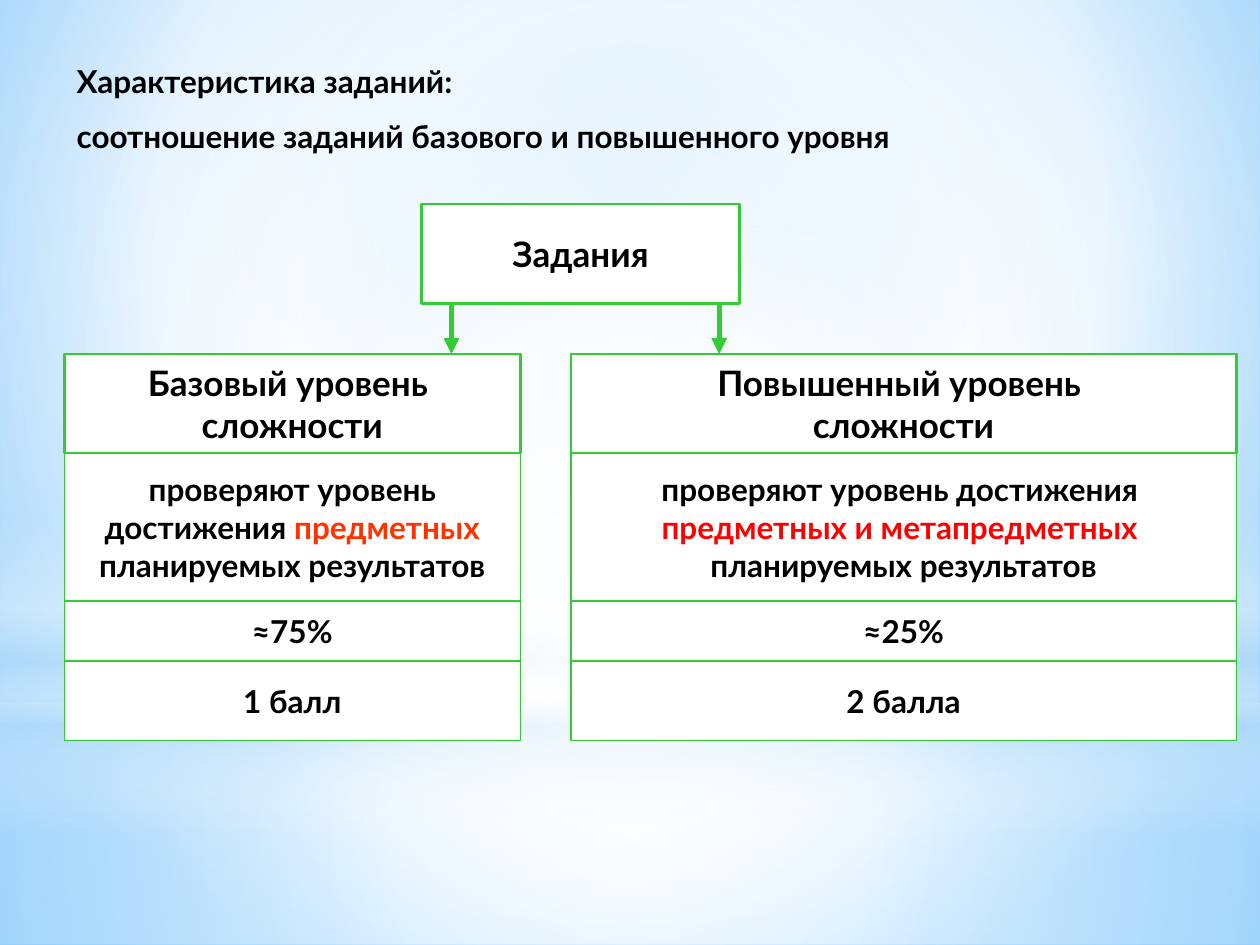
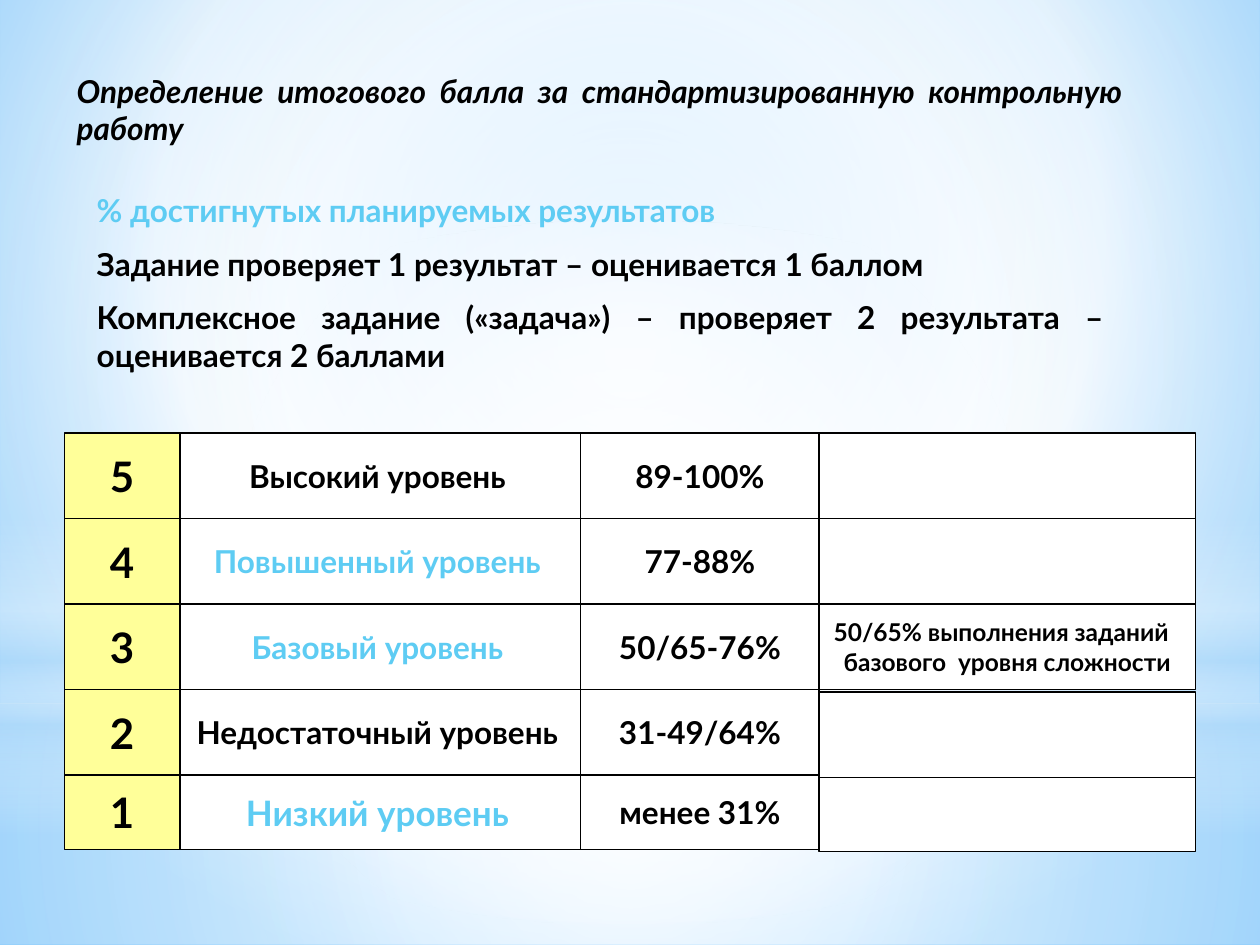
from lxml import etree
from pptx import Presentation
from pptx.dml.color import RGBColor
from pptx.enum.shapes import MSO_CONNECTOR, MSO_SHAPE
from pptx.enum.text import MSO_ANCHOR, MSO_AUTO_SIZE, PP_ALIGN
from pptx.oxml import parse_xml
from pptx.oxml.ns import nsdecls, qn
from pptx.util import Pt

RECTANGLE, OVAL = MSO_SHAPE.RECTANGLE, MSO_SHAPE.OVAL
STRAIGHT = MSO_CONNECTOR.STRAIGHT
MIDDLE, TOP = MSO_ANCHOR.MIDDLE, MSO_ANCHOR.TOP
CENTER, LEFT, JUSTIFY = PP_ALIGN.CENTER, PP_ALIGN.LEFT, PP_ALIGN.JUSTIFY
GROW = MSO_AUTO_SIZE.SHAPE_TO_FIT_TEXT

# Shared style
FONT = "Lato"
BLACK, WHITE, GREEN = "000000", "FFFFFF", "33CC33"
SKY, YELLOW, ORANGE, RED = "5ECCF3", "FFFF99", "FF3300", "FF0000"
HAZE = "B4DCFA"
WIDTH, HEIGHT = 720, 540
MARGIN = 36.7
CENTERED = (50, 50, 50, 50)

# Background gradient and the soft light over it: stops are (place, colour, opacity)
BACKGROUND = [(0, "9ED5FF", 100), (60, WHITE, 100), (100, "5BB9FF", 100)]
LIGHTS = [
    (RECTANGLE, 401.8, 138.2, CENTERED,
     [(0, WHITE, 91), (37, WHITE, 76), (100, HAZE, 79)]),
    (RECTANGLE, 0, 401.8, CENTERED,
     [(0, WHITE, 89), (48, WHITE, 62), (100, HAZE, 79)]),
    (RECTANGLE, 296.6, 180, None,
     [(0, WHITE, 0), (29, WHITE, 30), (45, HAZE, 40),
      (55, WHITE, 26), (65, HAZE, 60), (100, WHITE, 0)]),
    (OVAL, 126, 401.8, CENTERED, [(0, WHITE, 100), (56, WHITE, 0)]),
]


def color(value):
    return RGBColor.from_string(value)


def set_gradient(fill, element, stops, center):
    """Fill with a circular gradient, or a vertical one when center is None."""
    fill.gradient()
    previous = next(element.iter(qn("a:gradFill")))
    stop_xml = "".join(
        f'<a:gs pos="{place * 1000}"><a:srgbClr val="{value}">'
        f'<a:alpha val="{opacity * 1000}"/></a:srgbClr></a:gs>'
        for place, value, opacity in stops)
    if center is None:
        direction = '<a:lin ang="5400000" scaled="0"/>'
    else:
        sides = " ".join(f'{side}="{part * 1000}"' for side, part in zip("ltrb", center))
        direction = f'<a:path path="circle"><a:fillToRect {sides}/></a:path>'
    gradient = parse_xml(
        f'<a:gradFill {nsdecls("a")} rotWithShape="1">'
        f"<a:gsLst>{stop_xml}</a:gsLst>{direction}</a:gradFill>")
    previous.getparent().replace(previous, gradient)


class Deck:
    """Holds the presentation, its style and the current slide."""

    def __init__(self):
        self.presentation = Presentation()
        self.presentation.slide_width = Pt(WIDTH)
        self.presentation.slide_height = Pt(HEIGHT)
        master = self.presentation.slide_master
        set_gradient(master.background.fill, master.element, BACKGROUND, (20, 10, 20, 60))
        self.slide = None

    def new_slide(self):
        self.slide = self.presentation.slides.add_slide(self.presentation.slide_layouts[6])
        for kind, top, height, center, stops in LIGHTS:
            light = self.shape(kind, 0, top, WIDTH, height)
            set_gradient(light.fill, light.element, stops, center)
            light.line.fill.background()

    def shape(self, kind, left, top, width, height):
        shape = self.slide.shapes.add_shape(kind, Pt(left), Pt(top), Pt(width), Pt(height))
        shape.shadow.inherit = False
        return shape

    def add_lines(self, frame, lines, size, align=CENTER, gap=0, italic=False):
        """Each line is a list of runs; a run is a text or a (text, colour) pair."""
        for index, runs in enumerate(lines):
            paragraph = frame.add_paragraph() if index else frame.paragraphs[0]
            paragraph.alignment = align
            paragraph.space_before = Pt(gap)
            for item in runs:
                text, value = item if isinstance(item, tuple) else (item, BLACK)
                run = paragraph.add_run()
                run.text = text
                run.font.name = FONT
                run.font.size = Pt(size)
                run.font.bold = True
                run.font.italic = italic
                run.font.color.rgb = color(value)

    def box(self, left, top, width, height, lines=(), size=18,
            fill=WHITE, line=BLACK, weight=0.75):
        box = self.shape(RECTANGLE, left, top, width, height)
        box.fill.solid()
        box.fill.fore_color.rgb = color(fill)
        box.line.color.rgb = color(line)
        box.line.width = Pt(weight)
        box.text_frame.word_wrap = False
        box.text_frame.vertical_anchor = MIDDLE
        self.add_lines(box.text_frame, lines, size)

    def text(self, left, top, width, height, lines, **style):
        text_box = self.slide.shapes.add_textbox(Pt(left), Pt(top), Pt(width), Pt(height))
        frame = text_box.text_frame
        frame.word_wrap = True
        frame.auto_size = GROW
        frame.vertical_anchor = TOP
        self.add_lines(frame, lines, 18, **style)
        return frame

    def down_arrow(self, x, top, bottom):
        arrow = self.slide.shapes.add_connector(STRAIGHT, Pt(x), Pt(top), Pt(x), Pt(bottom))
        arrow.line.color.rgb = color(GREEN)
        arrow.line.width = Pt(3)
        properties = arrow.element.spPr
        etree.SubElement(properties.find(qn("a:ln")), qn("a:tailEnd"), type="triangle")
        etree.SubElement(properties, qn("a:effectLst"))


def build_task_levels(deck):
    deck.new_slide()
    deck.text(MARGIN, 31.7, 635, 62.6,
              [["Характеристика заданий:"],
               ["соотношение заданий базового и повышенного уровня"]],
              align=LEFT, gap=10)

    # Two level columns under the root box
    deck.box(241, 116.7, 181.5, 56.7, [["Задания"]], 20, line=GREEN, weight=1.5)
    row_heights = [56.5, 84.75, 34.25, 45.25]
    levels_top = 202.3
    levels = [
        (MARGIN, 260.6, [
            [["Базовый уровень "], ["сложности"]],
            [["проверяют уровень"],
             [" достижения ", ("предметных ", ORANGE)],
             ["планируемых результатов"]],
            [["≈75%"]],
            [["1 балл"]]]),
        (326.2, 380.2, [
            [["Повышенный уровень "], ["сложности"]],
            [["проверяют уровень достижения "],
             [("предметных и метапредметных ", RED)],
             ["планируемых результатов"]],
            [["≈25%"]],
            [["2 балла"]]]),
    ]
    for left, width, cells in levels:
        top = levels_top
        for index, (height, lines) in enumerate(zip(row_heights, cells)):
            size, weight = (18, 0.75) if index else (20, 1.5)
            deck.box(left, top, width, height, lines, size, line=GREEN, weight=weight)
            top += height
    for x in (258, 411):
        deck.down_arrow(x, 173.4, levels_top)


def build_final_score(deck):
    deck.new_slide()

    # Score scale: one row per mark
    rows = [
        ("5", ("Высокий уровень", BLACK), "89-100%", []),
        ("4", ("Повышенный уровень", SKY), "77-88%", []),
        ("3", ("Базовый уровень", SKY), "50/65-76%",
         [["50/65% выполнения заданий  "], ["базового  уровня сложности"]]),
        ("2", ("Недостаточный уровень", BLACK), "31-49/64%", []),
        ("1", ("Низкий уровень", SKY), "менее 31%", []),
    ]
    scale_top, row_step, last_height = 247.4, 48.85, 42.5
    for index, (mark, level, percent, note) in enumerate(rows):
        top = scale_top + index * row_step
        is_last = index == len(rows) - 1
        height = last_height if is_last else row_step
        note_top = top + (1.4 if index > 2 else 0)
        deck.box(99.4, top, 232.6, height, [[level]], 20 if is_last else 18)
        deck.box(MARGIN, top, 66.2, height, [[mark]], 24, fill=YELLOW)
        deck.box(331.9, top, 136.1, height, [[percent]])
        deck.box(468, note_top, 215.3, height, note, 14)

    # Scoring rules and title
    rules = deck.text(
        48.2, 105.8, 589.7, 115.2,
        [[("% достигнутых планируемых результатов", SKY)],
         ["Задание проверяет 1 результат – оценивается 1 баллом"],
         ["Комплексное задание («задача») – проверяет 2 результата – оценивается 2 баллами"]],
        align=LEFT, gap=9)
    rules.paragraphs[-1].alignment = JUSTIFY
    deck.text(MARGIN, 37.4, 612, 51.1,
              [["Определение итогового балла за стандартизированную контрольную работу"]],
              align=JUSTIFY, italic=True)


def main():
    deck = Deck()
    build_task_levels(deck)
    build_final_score(deck)
    deck.presentation.save("out.pptx")


if __name__ == "__main__":
    main()
